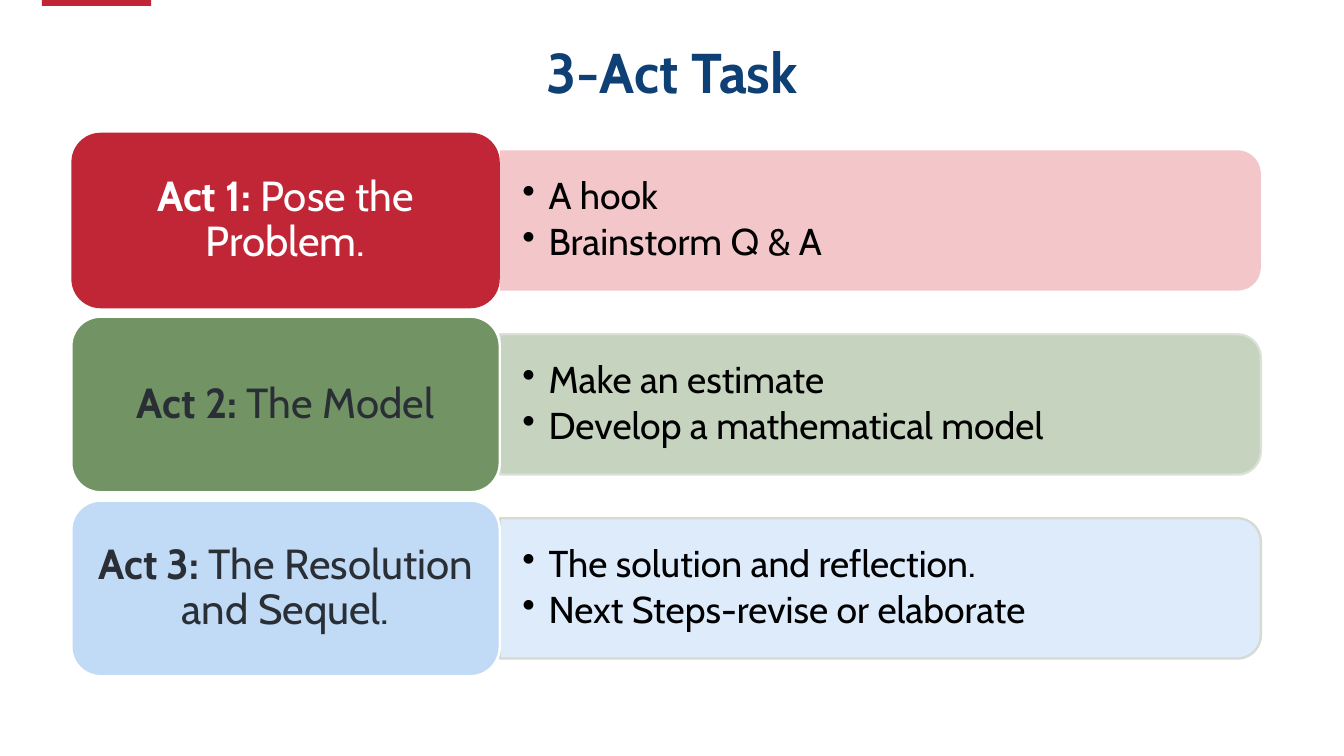
"""Build the 3-Act Task slide: three act cards, each beside a band of bullets."""
from dataclasses import dataclass

from lxml.etree import SubElement
from pptx import Presentation
from pptx.dml.color import RGBColor
from pptx.enum.shapes import MSO_SHAPE
from pptx.enum.text import MSO_ANCHOR, PP_ALIGN
from pptx.oxml.ns import qn
from pptx.util import Inches, Pt

FONT = "Cabin"
COLS, ROWS = 160, 90
WIDE, HIGH = Inches(16), Inches(9)
HUES = {
    "red": "C12637", "navy": "0E3F75", "black": "000000", "white": "FFFFFF",
    "ink": "2A2F36", "green": "729364", "blue": "C1DBF7",
    "pink": "F2C0C5", "sage": "C0CFB9", "sky": "DDEBFB",
    "mist": "DAE1D7", "grey": "D5DAD3",
}
TOP, STEP = 15.8, 21.9
CARD_X, CARD_W, CARD_H = 8.5, 51, 20.9
BAND_X, BAND_W, BAND_H = 59.5, 90.6, 16.7
TEXT_W, TEXT_H = 89.8, 15.1


@dataclass
class Act:
    label: str
    name: str
    points: list[str]
    fill: str
    ink: str
    edge: str | None
    band: str
    rim: str | None
    alpha: int


ACTS = [
    Act("Act 1: ", "Pose the Problem.", ["A hook", "Brainstorm Q & A"],
        "red", "white", None, "pink", None, 90),
    Act("Act 2: ", "The Model", ["Make an estimate", "Develop a mathematical model"],
        "green", "ink", "white", "sage", "mist", 90),
    Act("Act 3: ", "The Resolution and Sequel.",
        ["The solution and reflection.", "Next Steps-revise or elaborate"],
        "blue", "ink", "white", "sky", "grey", 100),
]


def hue(name: str) -> RGBColor:
    return RGBColor.from_string(HUES[name])


def place(x: float, y: float, w: float, h: float) -> tuple[int, int, int, int]:
    col, row = WIDE / COLS, HIGH / ROWS
    return round(x * col), round(y * row), round(w * col), round(h * row)


def style(run, size: float, ink: str, bold: bool = False) -> None:
    run.font.name = FONT
    run.font.size = Pt(size)
    run.font.bold = bold
    run.font.color.rgb = hue(ink)


def inset(frame, side: float, edge: float) -> None:
    frame.word_wrap = True
    frame.margin_left = frame.margin_right = Inches(side)
    frame.margin_top = frame.margin_bottom = Inches(edge)


def draw(slide, kind, box: tuple, fill: str, edge: str | None = None, alpha: int = 100):
    shape = slide.shapes.add_shape(kind, *box)
    shape.shadow.inherit = False
    shape.fill.solid()
    shape.fill.fore_color.rgb = hue(fill)
    if edge:
        shape.line.color.rgb = hue(edge)
        shape.line.width = Pt(2)
    else:
        shape.line.fill.background()
    if alpha < 100:
        for tint in shape.element.spPr.iter(qn("a:srgbClr")):
            SubElement(tint, qn("a:alpha")).set("val", str(alpha * 1000))
    return shape


def add_dot(para) -> None:
    props = para._p.get_or_add_pPr()
    props.set("marL", str(Inches(0.31)))
    props.set("indent", str(-Inches(0.31)))
    tint = SubElement(props, qn("a:buClr"))
    SubElement(tint, qn("a:srgbClr")).set("val", HUES["black"])
    SubElement(props, qn("a:buChar")).set("char", "•")


def add_title(slide) -> None:
    title = slide.shapes.title
    title.left, title.top, title.width, title.height = place(5, 4.8, 150, 17.4)
    frame = title.text_frame
    frame.text = "3-Act Task"
    frame.vertical_anchor = MSO_ANCHOR.TOP
    inset(frame, 0.12, 0.06)
    para = frame.paragraphs[0]
    para.alignment = PP_ALIGN.CENTER
    para.line_spacing = 0.9
    style(para.runs[0], 48, "navy", True)


def add_band(slide, act: Act, mid: float) -> None:
    left = BAND_X + (BAND_W - BAND_H) / 2
    box = place(left, mid - BAND_W / 2, BAND_H, BAND_W)
    band = draw(slide, MSO_SHAPE.ROUND_2_SAME_RECTANGLE, box, act.band, act.rim, act.alpha)
    band.rotation = 90
    text = slide.shapes.add_textbox(*place(BAND_X, mid - TEXT_H / 2, TEXT_W, TEXT_H))
    frame = text.text_frame
    frame.text = "\n".join(act.points)
    frame.vertical_anchor = MSO_ANCHOR.MIDDLE
    inset(frame, 0.27, 0.14)
    for para in frame.paragraphs:
        add_dot(para)
        para.level = 1
        para.line_spacing = 0.9
        para.space_after = Pt(4.8)
        style(para.runs[0], 32, "black")


def add_card(slide, act: Act, mid: float) -> None:
    box = place(CARD_X, mid - CARD_H / 2, CARD_W, CARD_H)
    card = draw(slide, MSO_SHAPE.ROUNDED_RECTANGLE, box, act.fill, act.edge)
    frame = card.text_frame
    frame.text = act.label
    frame.vertical_anchor = MSO_ANCHOR.MIDDLE
    inset(frame, 0.15, 0.07)
    para = frame.paragraphs[0]
    para.alignment = PP_ALIGN.CENTER
    para.line_spacing = 0.9
    para.add_run().text = act.name
    for run, bold in zip(para.runs, (True, False)):
        style(run, 36, act.ink, bold)


def main() -> None:
    deck = Presentation()
    deck.slide_width, deck.slide_height = WIDE, HIGH
    slide = deck.slides.add_slide(deck.slide_layouts[5])
    draw(slide, MSO_SHAPE.RECTANGLE, place(5, 0, 13, 0.7), "red")
    add_title(slide)
    for i, act in enumerate(ACTS):
        mid = TOP + i * STEP + CARD_H / 2
        add_band(slide, act, mid)
        add_card(slide, act, mid)
    deck.save("out.pptx")


if __name__ == "__main__":
    main()
